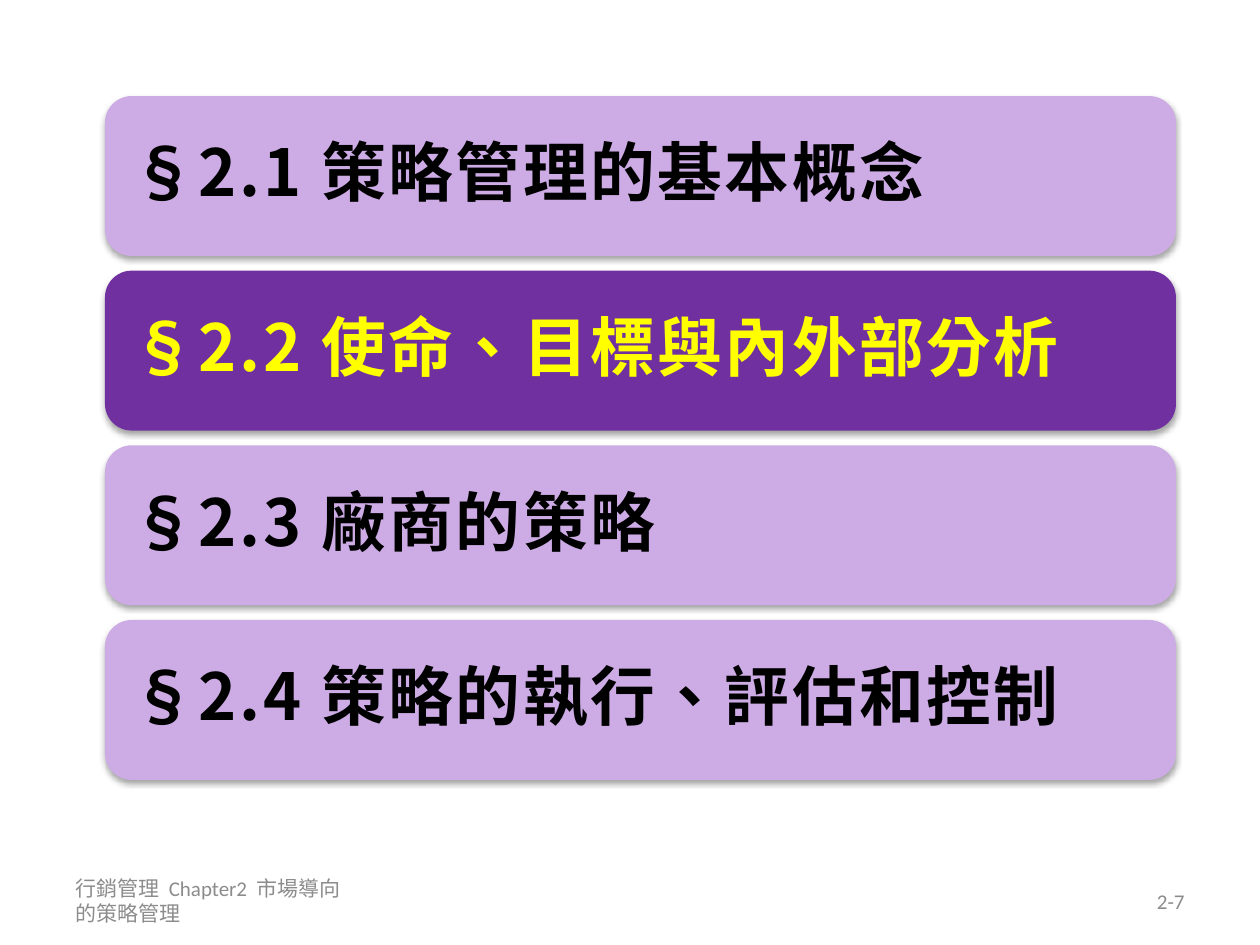
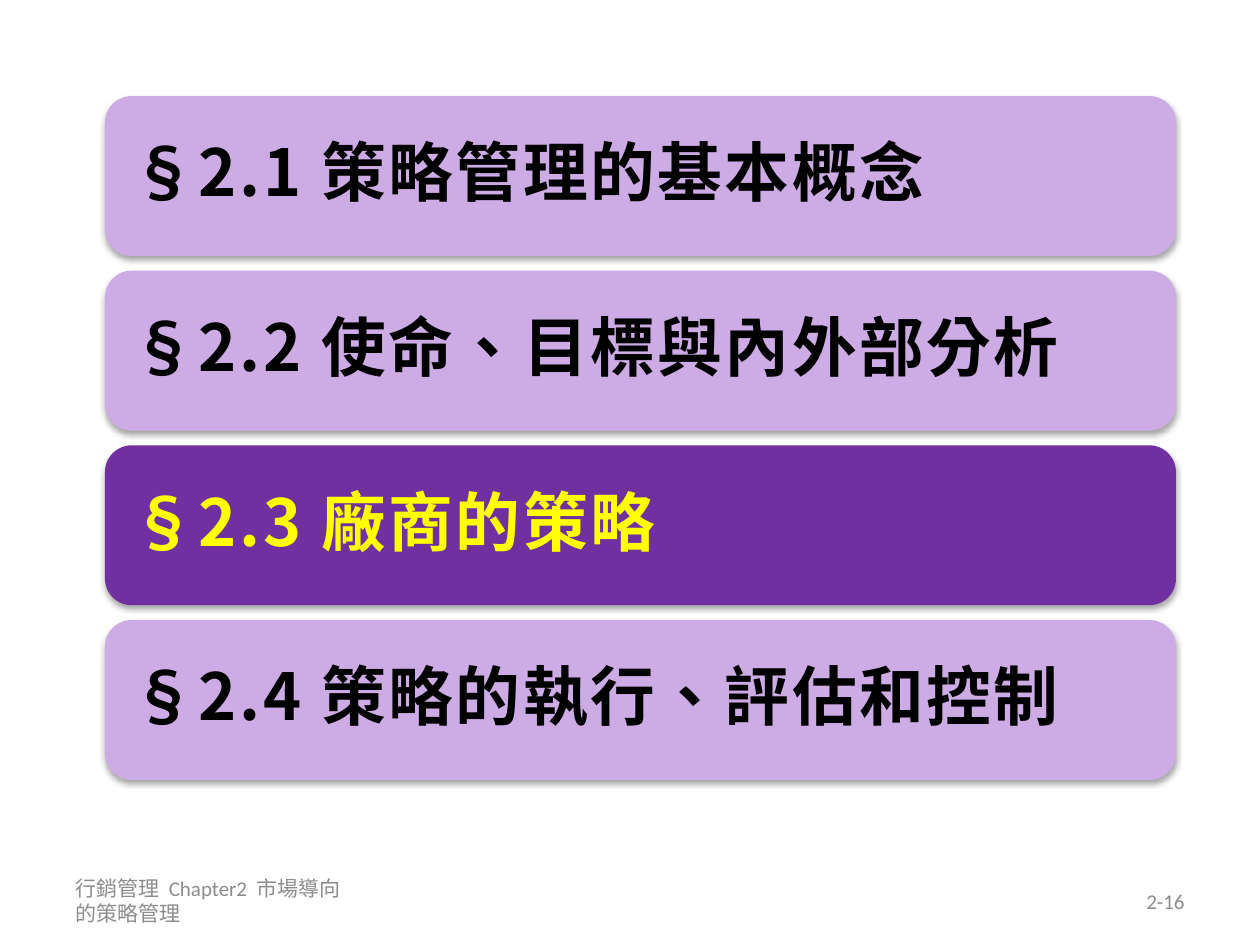
from lxml import etree
from pptx import Presentation
from pptx.dml.color import RGBColor
from pptx.enum import lang, shapes, text
from pptx.oxml.ns import qn
from pptx.util import Pt

SECTIONS = [
    "§2.1 策略管理的基本概念",
    "§2.2 使命、目標與內外部分析",
    "§2.3 廠商的策略",
    "§2.4 策略的執行、評估和控制",
]
SLIDES = [
    {"current": 1, "page": "2-7"},
    {"current": 2, "page": "2-16"},
]
FOOTER = "行銷管理  Chapter2  市場導向的策略管理"

SLIDE_W, SLIDE_H = 720, 540
BAR_LEFT, BAR_TOP, BAR_W, BAR_H = 60, 54.9, 600, 91.4
BAR_W = SLIDE_W - BAR_LEFT - 48
BAR_PITCH = 99.8
FOOT_TOP, FOOT_W, FOOT_H, FOOT_MARGIN = 500.5, 168, 28.75, 36

BAR_FILL, BAR_TEXT = "CDACE6", "000000"
CURRENT_FILL, CURRENT_TEXT = "7030A0", "FFFF00"
FOOT_TEXT, SHADOW = "8C8C8C", "000000"
BAR_FONT, FOOT_FONT = "Noto Sans CJK SC", "Calibri"


def rgb(value):
    return RGBColor.from_string(value)


def write(sp, words, font, size, color, bold=False):
    tf = sp.text_frame
    tf.word_wrap = True
    tf.vertical_anchor = text.MSO_ANCHOR.MIDDLE
    p = tf.paragraphs[0]
    p.alignment = text.PP_ALIGN.LEFT
    p.font.name = font
    p.font.size = Pt(size)
    p.font.bold = bold
    p.font.color.rgb = rgb(color)
    r = p.add_run()
    r.text = words
    r.font.language_id = lang.MSO_LANGUAGE_ID.TRADITIONAL_CHINESE
    return p, r


def add_shadow(sp):
    sp.shadow.inherit = False
    effects = sp._element.spPr.find(qn("a:effectLst"))
    outer = etree.SubElement(
        effects, qn("a:outerShdw"), blurRad=str(Pt(3.1)), dist=str(Pt(1.8)),
        dir="5400000", rotWithShape="0")
    color = etree.SubElement(outer, qn("a:srgbClr"), val=SHADOW)
    etree.SubElement(color, qn("a:alpha"), val="35000")


def add_bar(slide, index, words, is_current):
    sp = slide.shapes.add_shape(
        shapes.MSO_SHAPE.ROUNDED_RECTANGLE, Pt(BAR_LEFT),
        Pt(BAR_TOP + index * BAR_PITCH), Pt(BAR_W), Pt(BAR_H))
    sp.fill.solid()
    sp.fill.fore_color.rgb = rgb(CURRENT_FILL if is_current else BAR_FILL)
    sp.line.fill.background()
    add_shadow(sp)
    tf = sp.text_frame
    tf.margin_left = tf.margin_right = tf.margin_top = tf.margin_bottom = Pt(10.8)
    color = CURRENT_TEXT if is_current else BAR_TEXT
    p, r = write(sp, words, BAR_FONT, 37, color, bold=True)
    p.line_spacing = 0.9
    rPr = r._r.get_or_add_rPr()
    rPr.set("spc", "150")
    etree.SubElement(rPr, qn("a:ea"), typeface=BAR_FONT)


def add_footer(slide, left, words, align):
    sp = slide.shapes.add_textbox(Pt(left), Pt(FOOT_TOP), Pt(FOOT_W), Pt(FOOT_H))
    p, _ = write(sp, words, FOOT_FONT, 12, FOOT_TEXT)
    p.alignment = align


def main():
    prs = Presentation()
    prs.slide_width, prs.slide_height = Pt(SLIDE_W), Pt(SLIDE_H)
    for content in SLIDES:
        slide = prs.slides.add_slide(prs.slide_layouts[6])
        add_footer(slide, FOOT_MARGIN, FOOTER, text.PP_ALIGN.LEFT)
        add_footer(slide, SLIDE_W - FOOT_MARGIN - FOOT_W, content["page"],
                   text.PP_ALIGN.RIGHT)
        for index, words in enumerate(SECTIONS):
            add_bar(slide, index, words, index == content["current"])
    prs.save("out.pptx")


if __name__ == "__main__":
    main()
